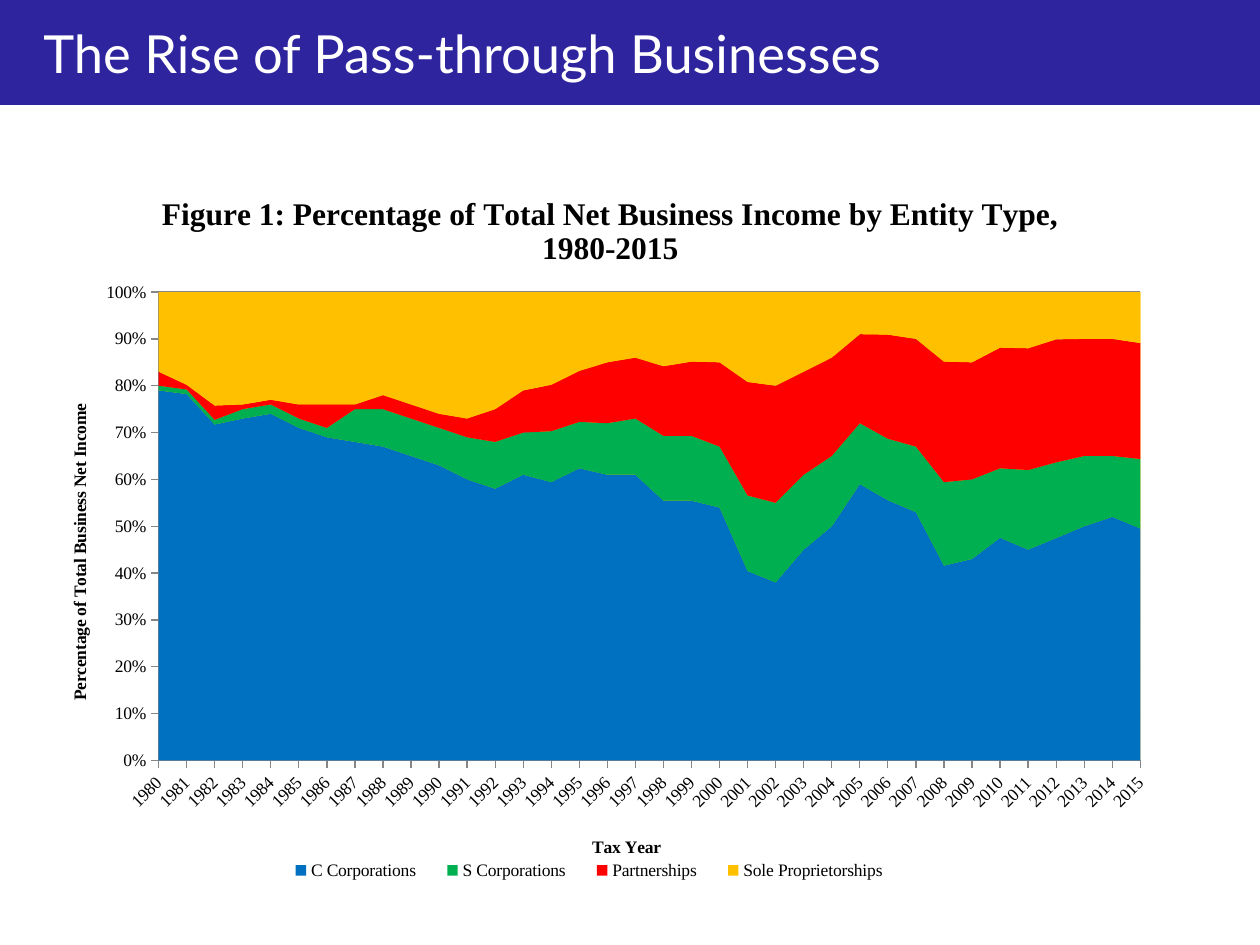
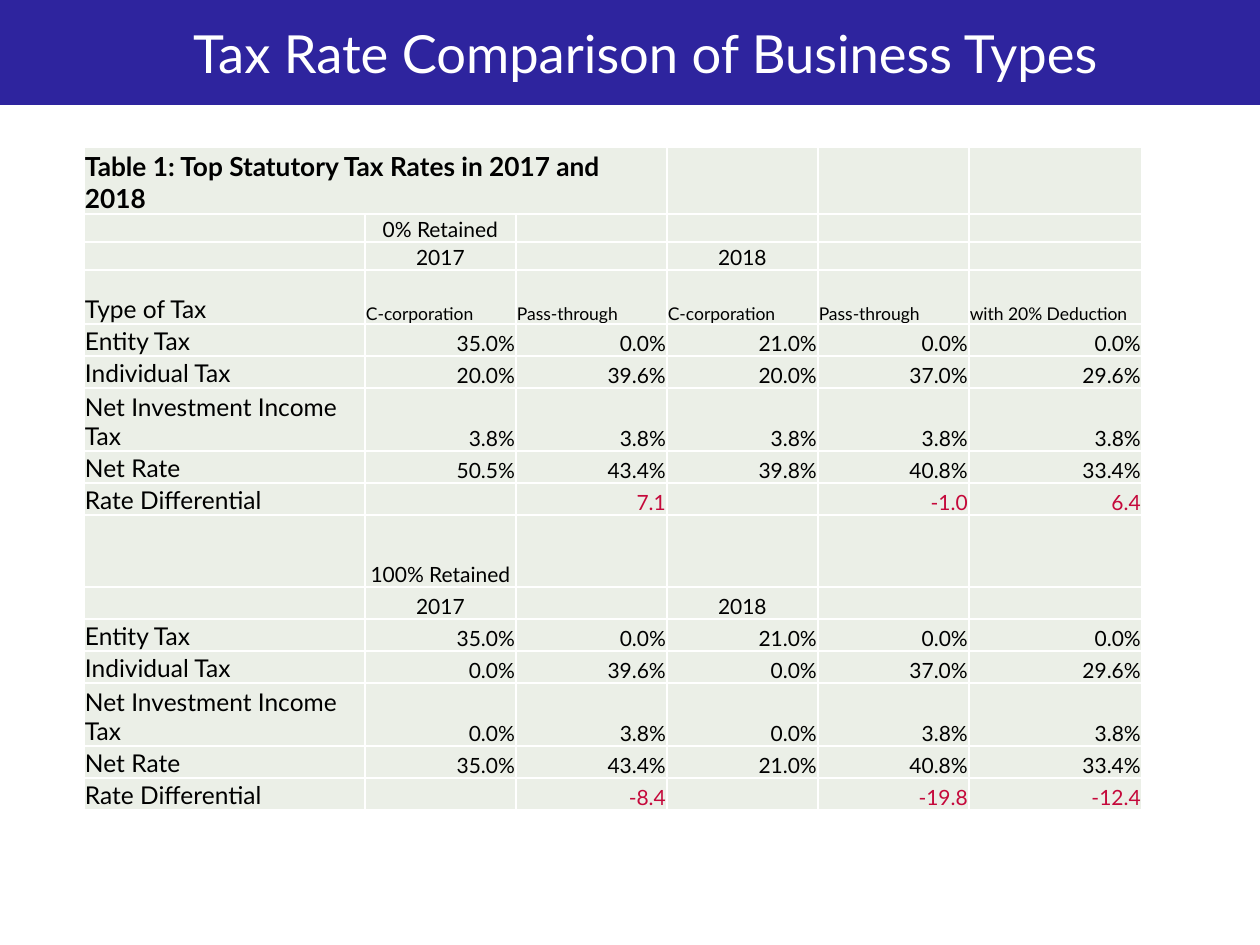
from lxml import etree
from pptx import Presentation
from pptx import util as u
from pptx.chart.data import CategoryChartData
from pptx.dml.color import RGBColor
from pptx.enum import chart as ch
from pptx.enum import shapes, text
from pptx.oxml import parse_xml
from pptx.oxml.ns import nsdecls, qn

EMU_PER_PX = 914400 / 126
HEADING_FONT = "Lato"
CHART_FONT = "Times New Roman"

WHITE = RGBColor(0xFF, 0xFF, 0xFF)
BLACK = RGBColor(0, 0, 0)
INDIGO = RGBColor(0x2E, 0x24, 0x9E)
CELL_TINT = RGBColor(0xEB, 0xEF, 0xE7)
CRIMSON = RGBColor(0xC5, 0x09, 0x3B)
AXIS_GREY = RGBColor(0x86, 0x86, 0x86)
BLUE = RGBColor(0x00, 0x70, 0xC0)
GREEN = RGBColor(0x00, 0xB0, 0x50)
RED = RGBColor(0xFF, 0x00, 0x00)
AMBER = RGBColor(0xFF, 0xC0, 0x00)

LEFT, CENTER, RIGHT = text.PP_ALIGN.LEFT, text.PP_ALIGN.CENTER, text.PP_ALIGN.RIGHT

INCOME_SHARES = [
    ("C Corporations", BLUE,
     [79, 79, 71, 73, 74, 71, 69, 68, 67, 65, 63, 60, 58, 61, 60, 63, 61, 61,
      56, 56, 54, 40, 38, 45, 50, 59, 55, 53, 42, 43, 48, 45, 47, 50, 52, 50]),
    ("S Corporations", GREEN,
     [1, 1, 1, 2, 2, 2, 2, 7, 8, 8, 8, 9, 10, 9, 11, 10, 11, 12,
      14, 14, 13, 16, 17, 16, 15, 13, 13, 14, 18, 17, 15, 17, 16, 15, 13, 15]),
    ("Partnerships", RED,
     [3, -1, -3, -1, -1, -3, -5, -1, 3, 3, 3, 4, 7, 9, 10, 11, 13, 13,
      15, 16, 18, 24, 25, 22, 21, 19, 22, 23, 26, 25, 26, 26, 26, 25, 25, 25]),
    ("Sole Proprietorships", AMBER,
     [17, 20, 24, 24, 23, 24, 24, 24, 22, 24, 26, 27, 25, 21, 20, 17, 15, 14,
      16, 15, 15, 19, 20, 17, 14, 9, 9, 10, 15, 15, 12, 12, 10, 10, 10, 11]),
]

YEAR_ROW = ["", "2017", "", "2018", "", ""]
TAX_RATES = [
    ["Table 1: Top Statutory Tax Rates in 2017 and 2018", "", "", "", "", ""],
    ["", "0% Retained", "", "", "", ""],
    YEAR_ROW,
    ["Type of Tax", "C-corporation", "Pass-through", "C-corporation", "Pass-through",
     "with 20% Deduction"],
    ["Entity Tax", "35.0%", "0.0%", "21.0%", "0.0%", "0.0%"],
    ["Individual Tax", "20.0%", "39.6%", "20.0%", "37.0%", "29.6%"],
    ["Net Investment Income Tax", "3.8%", "3.8%", "3.8%", "3.8%", "3.8%"],
    ["Net Rate", "50.5%", "43.4%", "39.8%", "40.8%", "33.4%"],
    ["Rate Differential", "", "7.1", "", "-1.0", "6.4"],
    ["", "100% Retained", "", "", "", ""],
    YEAR_ROW,
    ["Entity Tax", "35.0%", "0.0%", "21.0%", "0.0%", "0.0%"],
    ["Individual Tax", "0.0%", "39.6%", "0.0%", "37.0%", "29.6%"],
    ["Net Investment Income Tax", "0.0%", "3.8%", "0.0%", "3.8%", "3.8%"],
    ["Net Rate", "35.0%", "43.4%", "21.0%", "40.8%", "33.4%"],
    ["Rate Differential", "", "-8.4", "", "-19.8", "-12.4"],
]
COLUMN_WIDTHS = [281, 151, 151, 151, 151, 173]
ROW_HEIGHTS = [67, 28, 28, 54, 32, 32, 63, 32, 32, 72, 32, 32, 32, 63, 32, 32]


def px(length):
    return u.Emu(round(length * EMU_PER_PX))


def box(*lengths):
    return [px(length) for length in lengths]


def style_font(font, name, size, color, bold=False):
    font.name = name
    font.size = u.Pt(size)
    font.bold = bold
    font.color.rgb = color


def add_titled_slide(deck, title, align=LEFT):
    slide = deck.slides.add_slide(deck.slide_layouts[6])
    band = slide.shapes.add_shape(shapes.MSO_SHAPE.RECTANGLE, *box(0, 0, 1260, 105))
    band.shadow.inherit = False
    band.fill.solid()
    band.fill.fore_color.rgb = INDIGO
    band.line.fill.background()
    heading = slide.shapes.add_textbox(*box(31, 15, 1229, 77)).text_frame
    heading.word_wrap = True
    line = heading.paragraphs[0]
    line.text = title
    line.alignment = align
    style_font(line.font, HEADING_FONT, 30, WHITE)
    return slide


def place(element, inner=False, **fractions):
    for old in element.findall(qn("c:layout")):
        element.remove(old)
    target = '<c:layoutTarget val="inner"/>' if inner else ""
    modes = "".join(f'<c:{side}Mode val="edge"/>' for side in "xy")
    values = "".join(f'<c:{key} val="{value}"/>' for key, value in fractions.items())
    layout = parse_xml(f'<c:layout {nsdecls("c")}><c:manualLayout>{target}{modes}{values}'
                       '</c:manualLayout></c:layout>')
    leader = next((element.find(qn(tag)) for tag in ("c:tx", "c:legendPos")
                   if element.find(qn(tag)) is not None), None)
    if leader is None:
        element.insert(0, layout)
    else:
        leader.addnext(layout)


def add_caption(owner, caption, size, x, y):
    owner.has_title = True
    title = owner.chart_title if hasattr(owner, "chart_title") else owner.axis_title
    line = title.text_frame.paragraphs[0]
    line.text = caption
    style_font(line.font, CHART_FONT, size, BLACK, True)
    place(title._element, x=x, y=y)


def style_axis(axis, caption, x, y):
    add_caption(axis, caption, 10, x, y)
    axis.major_tick_mark = ch.XL_TICK_MARK.OUTSIDE
    axis.minor_tick_mark = ch.XL_TICK_MARK.NONE
    axis.format.line.color.rgb = AXIS_GREY
    style_font(axis.tick_labels.font, CHART_FONT, 10, BLACK)


def fill_plot(plot_area, color):
    plot_area.append(parse_xml(
        f'<c:spPr {nsdecls("c", "a")}><a:solidFill><a:srgbClr val="{color}"/>'
        '</a:solidFill></c:spPr>'))


def add_income_chart(slide):
    data = CategoryChartData()
    data.categories = [str(year) for year in range(1980, 2016)]
    for entity, _, shares in INCOME_SHARES:
        data.add_series(entity, shares)
    chart = slide.shapes.add_chart(ch.XL_CHART_TYPE.AREA_STACKED_100,
                                   *box(31, 158, 1139, 758), data).chart
    style_font(chart.font, CHART_FONT, 10, BLACK)
    add_caption(chart, "Figure 1: Percentage of Total Net Business Income by Entity Type, "
                "1980-2015", 18, 0.11, 0.04)
    for series, (_, color, _) in zip(chart.plots[0].series, INCOME_SHARES):
        series.format.fill.solid()
        series.format.fill.fore_color.rgb = color

    years, shares = chart.category_axis, chart.value_axis
    style_axis(years, "Tax Year", 0.49, 0.89)
    years.tick_labels._element.find(qn("c:txPr")).find(qn("a:bodyPr")).set("rot", "-2700000")
    style_axis(shares, "Percentage of Total Business Net Income", 0.03, 0.32)
    shares.tick_labels.number_format = "0%"
    shares.tick_labels.number_format_is_linked = False
    shares.has_major_gridlines = True
    shares.major_gridlines.format.line.color.rgb = AXIS_GREY
    shares._element.find(qn("c:crossBetween")).set("val", "midCat")

    chart.has_legend = True
    chart.legend.position = ch.XL_LEGEND_POSITION.BOTTOM
    chart.legend.include_in_layout = False
    style_font(chart.legend.font, CHART_FONT, 10, BLACK)
    place(chart.legend._element, x=0.21, y=0.92, w=0.56, h=0.04)
    plot_area = chart._chartSpace.chart.plotArea
    place(plot_area, inner=True, x=0.112, y=0.177, w=0.862, h=0.618)
    fill_plot(plot_area, AMBER)


def add_borders(cell):
    properties = cell._tc.get_or_add_tcPr()
    for side in ("lnL", "lnR", "lnT", "lnB"):
        border = etree.SubElement(properties, qn(f"a:{side}"), w=str(u.Pt(1)))
        fill = etree.SubElement(border, qn("a:solidFill"))
        etree.SubElement(fill, qn("a:srgbClr"), val=str(WHITE))


def cell_style(row, column):
    label = TAX_RATES[row][0]
    if row == 0:
        return 15, LEFT, BLACK
    if not label:
        return 12, CENTER, BLACK
    if column == 0:
        return 14, LEFT, BLACK
    if label == "Type of Tax":
        return 10, LEFT, BLACK
    return 12, RIGHT, CRIMSON if label == "Rate Differential" else BLACK


def fill_cell(cell, wording, size, align, color, bold):
    add_borders(cell)
    cell.fill.solid()
    cell.fill.fore_color.rgb = CELL_TINT
    cell.margin_left = cell.margin_right = cell.margin_top = px(1)
    cell.margin_bottom = 0
    cell.vertical_anchor = text.MSO_ANCHOR.BOTTOM
    line = cell.text_frame.paragraphs[0]
    line.text = wording
    line.alignment = align
    style_font(line.font, HEADING_FONT, size, color, bold)
    if not wording:
        etree.SubElement(line._p, qn("a:endParaRPr"), sz=str(size * 100))


def add_rate_table(slide):
    table = slide.shapes.add_table(len(ROW_HEIGHTS), len(COLUMN_WIDTHS), *box(
        84, 147, sum(COLUMN_WIDTHS), sum(ROW_HEIGHTS))).table
    for column, width in zip(table.columns, COLUMN_WIDTHS):
        column.width = px(width)
    for row, height in zip(table.rows, ROW_HEIGHTS):
        row.height = px(height)
    for row, wordings in enumerate(TAX_RATES):
        for column, wording in enumerate(wordings):
            fill_cell(table.cell(row, column), wording, *cell_style(row, column), row == 0)
    table.cell(0, 0).merge(table.cell(0, 2))


def main():
    deck = Presentation()
    deck.slide_width, deck.slide_height = box(1260, 945)
    add_income_chart(add_titled_slide(deck, "The Rise of Pass-through Businesses"))
    add_rate_table(add_titled_slide(deck, "Tax Rate Comparison of Business Types", CENTER))
    deck.save("out.pptx")


if __name__ == "__main__":
    main()
